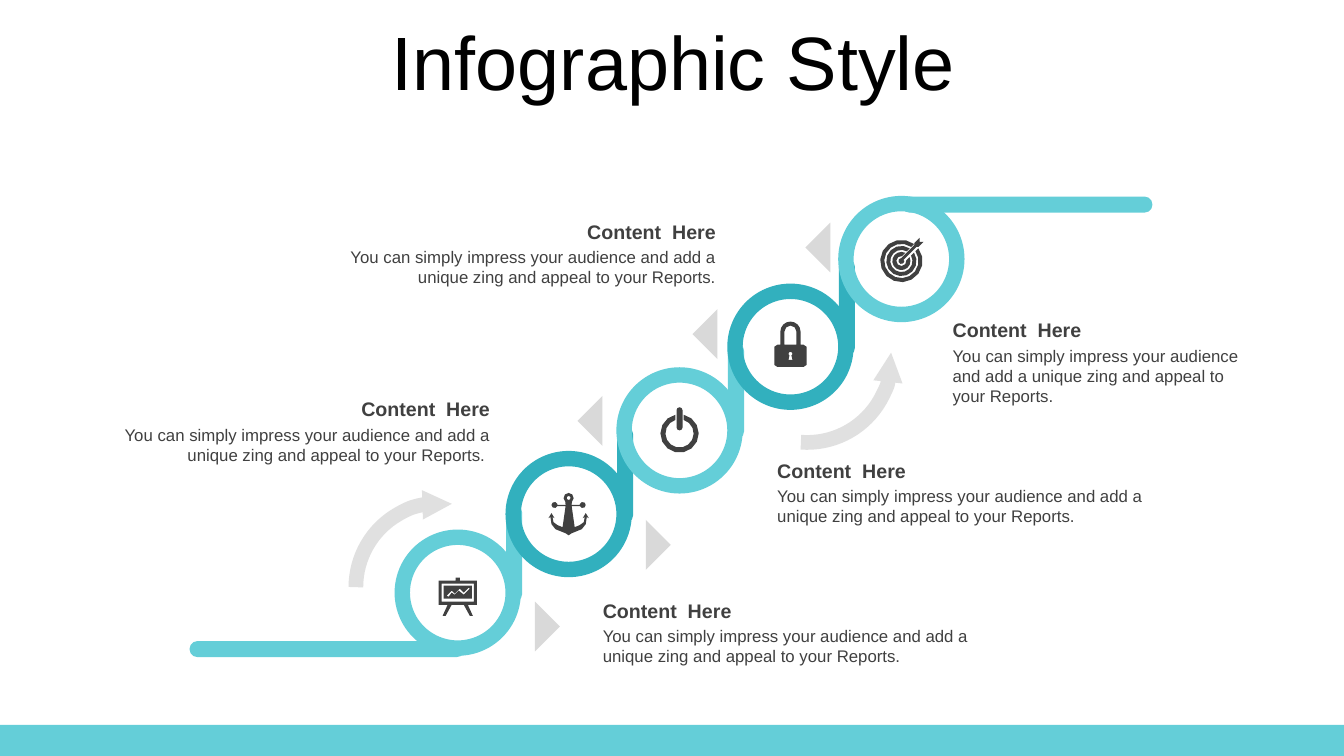
from dataclasses import dataclass
from math import asin, cos, degrees, radians, sin

from lxml.etree import SubElement
from pptx import Presentation
from pptx.dml.color import RGBColor
from pptx.enum.shapes import MSO_SHAPE
from pptx.enum.text import MSO_ANCHOR, MSO_AUTO_SIZE, PP_ALIGN
from pptx.oxml.ns import qn
from pptx.util import Inches, Pt


@dataclass(frozen=True)
class Theme:
    light: str = "64CED8"
    dark: str = "32B0BE"
    grey: str = "D9D9D9"
    ink: str = "404040"
    black: str = "000000"
    font: str = "Arial"
    title_size: int = 54
    heading_size: int = 14
    body_size: int = 12
    ring_line: float = 11
    arrow_line: float = 10.5


THEME = Theme()
RING = 1.1
BAR = 0.16
RING_TOPS = [5.33, 4.55, 3.72, 2.89, 2.02]
RING_CENTRES = [(3.99 + RING * (step + 0.5), top + RING / 2)
                for step, top in enumerate(RING_TOPS)]
BODY = "You can simply impress your audience and add a unique zing and appeal to your Reports."
# left, top, width, body height, alignment, body
CALLOUTS = [
    (3.24, 2.13, 3.96, 0.5, PP_ALIGN.RIGHT, BODY),
    (7.61, 4.5, 4.02, 0.5, PP_ALIGN.LEFT, BODY),
    (1.0, 3.89, 3.96, 0.5, PP_ALIGN.RIGHT, BODY + " "),
    (9.35, 3.11, 3.16, 0.71, PP_ALIGN.LEFT, BODY),
    (5.88, 5.89, 4.02, 0.5, PP_ALIGN.LEFT, BODY),
]
# left, top, rotation
POINTERS = [(8.06, 2.28, 45), (6.94, 3.14, 45), (5.8, 4.0, 45),
            (6.23, 5.23, 225), (5.13, 6.04, 225)]


def color(value):
    return RGBColor.from_string(value)


def add_plain(slide, kind, box, fill=None):
    plain = slide.shapes.add_shape(kind, *(Inches(length) for length in box))
    plain.shadow.inherit = False
    if fill:
        plain.fill.solid()
        plain.fill.fore_color.rgb = color(fill)
    else:
        plain.fill.background()
    plain.line.fill.background()
    return plain


def add_bar(slide, box, fill):
    add_plain(slide, MSO_SHAPE.ROUNDED_RECTANGLE, box, fill).adjustments[0] = 0.5


def style_text(frame, text, size, ink, align, bold=False):
    frame.word_wrap = True
    frame.text = text
    paragraph = frame.paragraphs[0]
    paragraph.alignment = align
    font = paragraph.runs[0].font
    font.name, font.size, font.bold = THEME.font, Pt(size), bold
    font.color.rgb = color(ink)
    return paragraph


# Title
def draw_title(slide, box):
    title = slide.shapes.title
    title.left, title.top, title.width, title.height = (Inches(length) for length in box)
    frame = title.text_frame
    heading = style_text(frame, "Infographic Style", THEME.title_size, THEME.black,
                         PP_ALIGN.CENTER)
    heading.line_spacing = 0.9
    heading.space_before = Pt(10)
    frame.auto_size = MSO_AUTO_SIZE.NONE
    frame.vertical_anchor = MSO_ANCHOR.MIDDLE


# Staircase of rings joined by bars
def draw_staircase(slide):
    for step, (x, y) in enumerate(RING_CENTRES):
        shade = THEME.dark if step % 2 else THEME.light
        ring = add_plain(slide, MSO_SHAPE.OVAL, (x - RING / 2, y - RING / 2, RING, RING))
        ring.line.color.rgb = color(shade)
        ring.line.width = Pt(THEME.ring_line)
        if step < len(RING_CENTRES) - 1:
            add_bar(slide, (x + 0.48, y - 0.87, BAR, 0.96), shade)
    add_bar(slide, (8.94, 1.95, 2.49, BAR), THEME.light)
    add_bar(slide, (1.88, 6.36, 2.73, BAR), THEME.light)


def draw_curved_arrow(slide, box, rotation, arrow_end):
    arc = add_plain(slide, MSO_SHAPE.ARC, box)
    arc.rotation = rotation
    arc.adjustments[0], arc.adjustments[1] = 162, 4.809
    arc.line.color.rgb = color(THEME.grey)
    arc.line.width = Pt(THEME.arrow_line)
    outline = arc.line._get_or_add_ln()
    SubElement(outline.find(".//" + qn("a:srgbClr")), qn("a:alpha"), val="80000")
    SubElement(outline, qn(arrow_end), type="triangle", w="sm", len="sm")


def draw_pointer(slide, left, top, rotation):
    pointer = add_plain(slide, MSO_SHAPE.RIGHT_TRIANGLE, (left, top, 0.35, 0.35), THEME.grey)
    pointer.rotation = rotation


# Heading with its explanation below
def draw_callout(slide, left, top, width, body_height, align, body):
    parts = [(top, 0.34, "Content  Here", THEME.heading_size, True),
             (top + 0.27, body_height, body, THEME.body_size, False)]
    for y, height, text, size, bold in parts:
        words = slide.shapes.add_textbox(Inches(left), Inches(y), Inches(width), Inches(height))
        style_text(words.text_frame, text, size, THEME.ink, align, bold)
        words.text_frame.auto_size = MSO_AUTO_SIZE.SHAPE_TO_FIT_TEXT


# Icon outlines, in inches from the ring centre
def arc_points(x, y, radius, start, end):
    steps = max(2, round(abs(end - start) / (50 if radius < 0.07 else 25)))
    angles = [radians(start + (end - start) * i / steps) for i in range(steps + 1)]
    return [(x + radius * cos(a), y + radius * sin(a)) for a in angles]


def rectangle(left, top, right, bottom):
    return [(left, top), (right, top), (right, bottom), (left, bottom)]


def mirrored(right_half):
    return right_half + [(-x, y) for x, y in reversed(right_half)]


def broken_ring(y, outer, inner, half_gap, direction):
    gap_out, gap_in = (degrees(asin(half_gap / radius)) for radius in (outer, inner))
    return (arc_points(0, y, outer, direction + gap_out, direction + 360 - gap_out)
            + arc_points(0, y, inner, direction + 360 - gap_in, direction + gap_in))


def easel():
    trend = [(0.11, -0.05), (0.06, 0), (0.02, -0.04), (-0.03, 0.01), (-0.06, -0.02),
             (-0.11, 0.03), (-0.09, 0.04), (-0.06, 0), (-0.03, 0.02), (0.01, -0.02),
             (0.06, 0.02), (0.12, -0.04)]
    stand = mirrored([(0.02, -0.15), (0.02, -0.12), (0.19, -0.12), (0.19, 0.12),
                      (0.1, 0.12), (0.15, 0.23), (0.12, 0.23), (0.06, 0.12)])
    return [stand, rectangle(-0.16, -0.09, 0.16, 0.09),
            rectangle(-0.14, -0.07, 0.14, 0.06), trend]


def anchor():
    half = (arc_points(0, -0.16, 0.05, -90, 50)
            + [(0.03, -0.09), (0.11, -0.09)] + arc_points(0.14, -0.09, 0.03, 200, 520)
            + [(0.11, -0.08), (0.03, -0.08), (0.06, 0.13), (0.11, 0.11), (0.15, 0.08),
               (0.16, 0.03), (0.14, 0.04), (0.17, -0.01), (0.2, 0.04), (0.18, 0.03),
               (0.17, 0.1), (0.13, 0.15), (0.03, 0.19), (0, 0.21)])
    return [mirrored(half), arc_points(0, -0.16, 0.02, 0, 360)]


def power():
    stem = arc_points(0, -0.2, 0.03, 180, 360) + arc_points(0, -0.03, 0.03, 0, 180)
    return [broken_ring(0.03, 0.19, 0.14, 0.04, -90), stem]


def padlock():
    case = mirrored(arc_points(0, -0.15, 0.1, -90, 0)
                    + [(0.1, -0.02), (0.13, -0.02), (0.16, 0), (0.16, 0.18), (0.13, 0.2)])
    shackle = arc_points(0, -0.15, 0.06, 180, 360) + [(0.06, -0.02), (-0.06, -0.02)]
    keyhole = arc_points(0, 0.07, 0.02, 120, 420) + [(0.02, 0.13), (-0.02, 0.13)]
    return [case, shackle, keyhole]


def target():
    radii = [(0.21, 0.17), (0.15, 0.11), (0.09, 0.05)]
    dart = ([(0.18, -0.21), (0.18, -0.17), (0.22, -0.17), (0.17, -0.12), (0.15, -0.12),
             (0.02, 0.01)] + arc_points(0, 0.02, 0.03, 0, 270)
            + [(0.13, -0.14), (0.13, -0.16)])
    return [broken_ring(0.02, outer, inner, 0.03, -45) for outer, inner in radii] + [dart]


def draw_icon(slide, centre, contours):
    placed = [[(Inches(centre[0] + x), Inches(centre[1] + y)) for x, y in contour]
              for contour in contours]
    builder = slide.shapes.build_freeform(*placed[0][0])
    builder.add_line_segments(placed[0][1:], close=True)
    for contour in placed[1:]:
        builder.move_to(*contour[0])
        builder.add_line_segments(contour[1:], close=True)
    icon = builder.convert_to_shape()
    icon.shadow.inherit = False
    icon.fill.solid()
    icon.fill.fore_color.rgb = color(THEME.ink)
    icon.line.fill.background()


def main():
    deck = Presentation()
    deck.slide_width, deck.slide_height = Inches(13.33), Inches(7.5)
    slide = deck.slides.add_slide(deck.slide_layouts[5])
    add_plain(slide, MSO_SHAPE.RECTANGLE, (0, 7.19, 13.33, 0.31), THEME.light)
    draw_title(slide, (0.35, 0.26, 12.66, 0.79))
    draw_staircase(slide)
    draw_curved_arrow(slide, (7.17, 2.72, 1.67, 1.67), 86.2, "a:headEnd")
    draw_curved_arrow(slide, (3.53, 4.99, 1.67, 1.67), 270, "a:tailEnd")
    for pointer in POINTERS:
        draw_pointer(slide, *pointer)
    for callout in CALLOUTS:
        draw_callout(slide, *callout)
    for centre, icon in zip(RING_CENTRES, [easel, anchor, power, padlock, target]):
        draw_icon(slide, centre, icon())
    deck.save("out.pptx")


if __name__ == "__main__":
    main()
